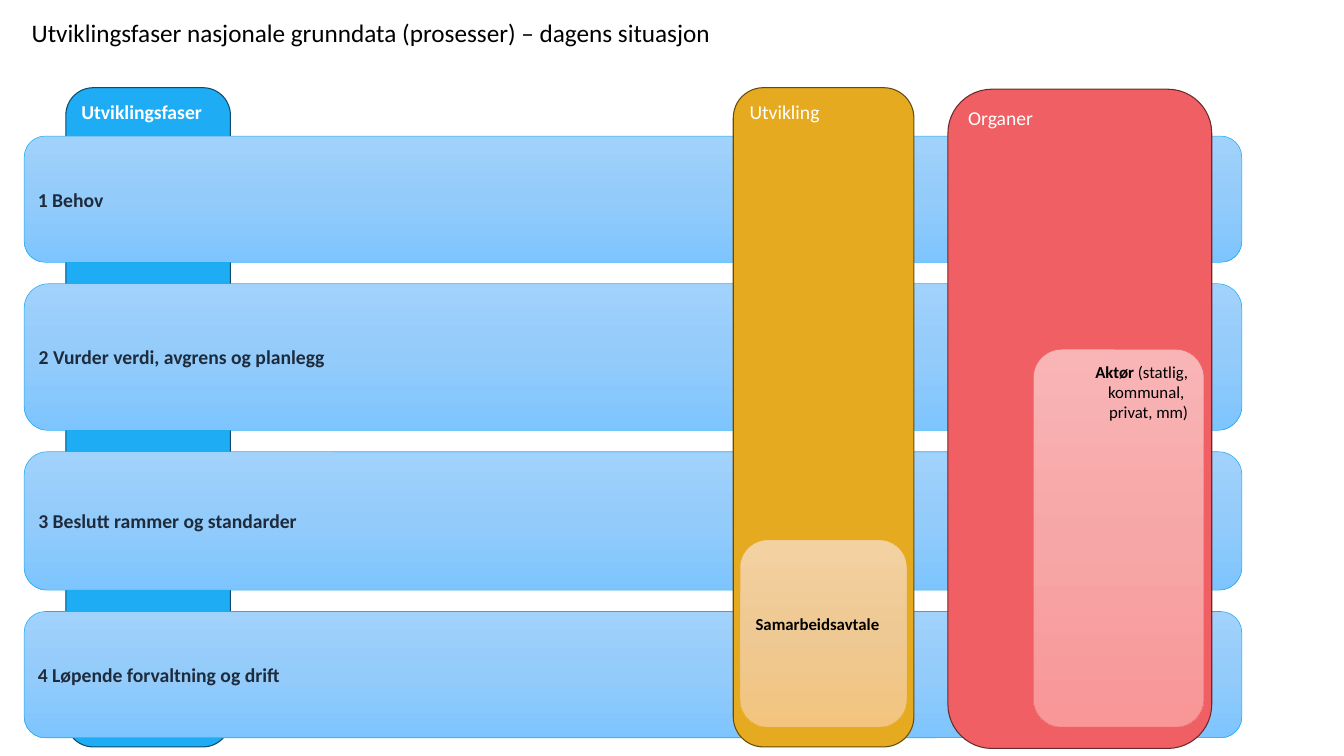
from lxml import etree
from pptx import Presentation
from pptx import util as u
from pptx.dml.color import RGBColor
from pptx.enum import shapes, text
from pptx.oxml.ns import qn

W, H = 17.78, 10
COLS, ROWS = 100, 100
FONT = "Calibri"
C = {
    "white": "FFFFFF", "black": "000000", "navy": "1E2B3C",
    "blue": "1EACF5", "blue_edge": "0D4B6B",
    "gold": "E5AA20", "gold_edge": "644B0E",
    "red": "F05F63", "red_edge": "692A2B",
}
GRADIENTS = {
    "blue": ("A1D2FC", "93CBFA", "7EC5FF"),
    "gold": ("F3D1A1", "EFC993", "F2C47E"),
    "red": ("F9B5B6", "F7A6A7", "F99698"),
}
BARS = [
    ("1 Behov", 16.7),
    ("2 Vurder verdi, avgrens og planlegg", 19.4),
    ("3 Beslutt rammer og standarder", 18.3),
    ("4 Løpende forvaltning og drift", 16.7),
]
BAR_TOP, BAR_GAP = 18, 2.83


def rgb(name):
    """Return the named colour."""
    return RGBColor.from_string(C[name])


def place(col, row, cols, rows):
    """Turn grid columns and rows into lengths."""
    cw, rh = W / COLS, H / ROWS
    return [u.Inches(v) for v in (col * cw, row * rh, cols * cw, rows * rh)]


def write(tf, runs, size, color, align=text.PP_ALIGN.LEFT):
    """Fill one paragraph with (words, bold) runs; None is a line break."""
    p = tf.paragraphs[0]
    p.alignment = align
    for run in runs:
        if run is None:
            p.add_line_break()
            continue
        r = p.add_run()
        r.text, r.font.bold = run
        r.font.name, r.font.size = FONT, u.Pt(size)
        r.font.color.rgb = rgb(color)


def box(parent, cell, edge, weight):
    """Add a rounded box with an outline and top-anchored text."""
    sp = parent.add_shape(shapes.MSO_SHAPE.ROUNDED_RECTANGLE, *place(*cell))
    sp.shadow.inherit = False
    sp.line.color.rgb = rgb(edge)
    sp.line.width = u.Pt(weight)
    sp.text_frame.word_wrap = True
    sp.text_frame.vertical_anchor = text.MSO_ANCHOR.TOP
    return sp


def column(parent, cell, color, title, bold=False):
    """Add a solid column with its title at the top."""
    sp = box(parent, cell, color + "_edge", 1)
    sp.fill.solid()
    sp.fill.fore_color.rgb = rgb(color)
    write(sp.text_frame, [(title, bold)], 18.7, "white")


def panel(parent, cell, color):
    """Add a box with a three-stop vertical gradient and return its text frame."""
    sp = box(parent, cell, color, 0.5)
    sp.fill.gradient()
    grad = sp.fill._xPr.find(qn("a:gradFill"))
    for child in list(grad):
        grad.remove(child)
    stops = etree.SubElement(grad, qn("a:gsLst"))
    for i, value in enumerate(GRADIENTS[color]):
        gs = etree.SubElement(stops, qn("a:gs"), pos=str(i * 50000))
        etree.SubElement(gs, qn("a:srgbClr"), val=value)
    etree.SubElement(grad, qn("a:lin"), ang="5400000", scaled="0")
    return sp.text_frame


def bars(parent):
    """Stack the phase bars with equal gaps."""
    tops = [BAR_TOP + sum(h + BAR_GAP for _, h in BARS[:i]) for i in range(len(BARS))]
    for (label, rows), top in reversed(list(zip(BARS, tops))):
        tf = panel(parent, (1.8, top, 90.6, rows), "blue")
        tf.vertical_anchor = text.MSO_ANCHOR.MIDDLE
        write(tf, [(label, True)], 18.7, "navy")


def heading(parent, cell, words):
    """Add the slide heading."""
    tf = parent.add_textbox(*place(*cell)).text_frame
    tf.word_wrap = False
    tf.auto_size = text.MSO_AUTO_SIZE.SHAPE_TO_FIT_TEXT
    write(tf, [(words, False)], 24, "black")


def main():
    """Build the slide and save it."""
    prs = Presentation()
    prs.slide_width, prs.slide_height = u.Inches(W), u.Inches(H)
    s = prs.slides.add_slide(prs.slide_layouts[6]).shapes

    column(s, (4.9, 11.6, 12.25, 87.2), "blue", "Utviklingsfaser", True)
    bars(s)
    column(s, (70.53, 11.8, 19.63, 87.2), "red", "Organer")
    tf = panel(s, (76.88, 46.2, 12.7, 50), "red")
    actor = [("Aktør", True), (" (statlig, kommunal, ", False), None, ("privat, mm)", False)]
    write(tf, actor, 16, "black", text.PP_ALIGN.RIGHT)
    heading(s, (1.8, 1.8, 52.08, 5),
            "Utviklingsfaser nasjonale grunndata (prosesser) – dagens situasjon")

    group = s.add_group_shape().shapes
    column(group, (54.56, 11.6, 13.44, 87.2), "gold", "Utvikling")
    tf = panel(group, (55.06, 71.4, 12.43, 24.8), "gold")
    tf.vertical_anchor = text.MSO_ANCHOR.MIDDLE
    tf.margin_bottom = u.Inches(0.3)
    write(tf, [("Samarbeidsavtale", True)], 16, "black")

    prs.save("out.pptx")


if __name__ == "__main__":
    main()
